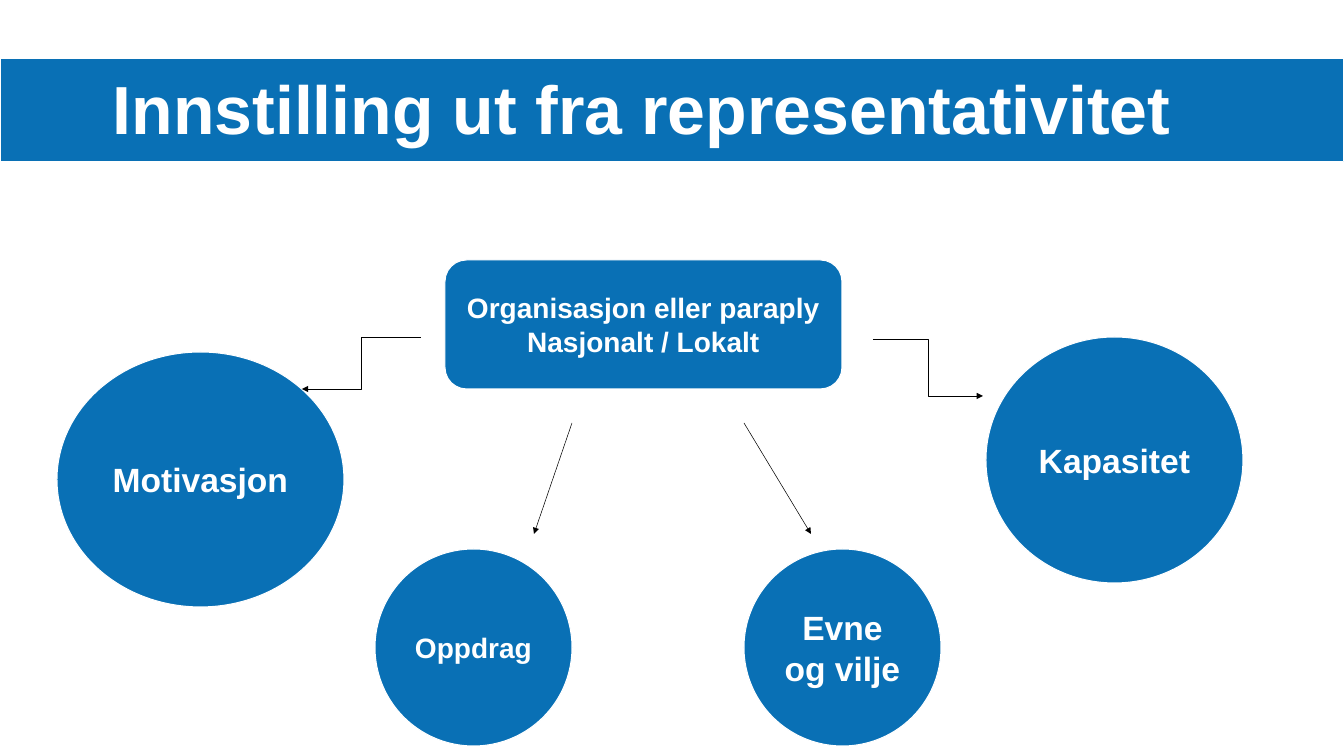
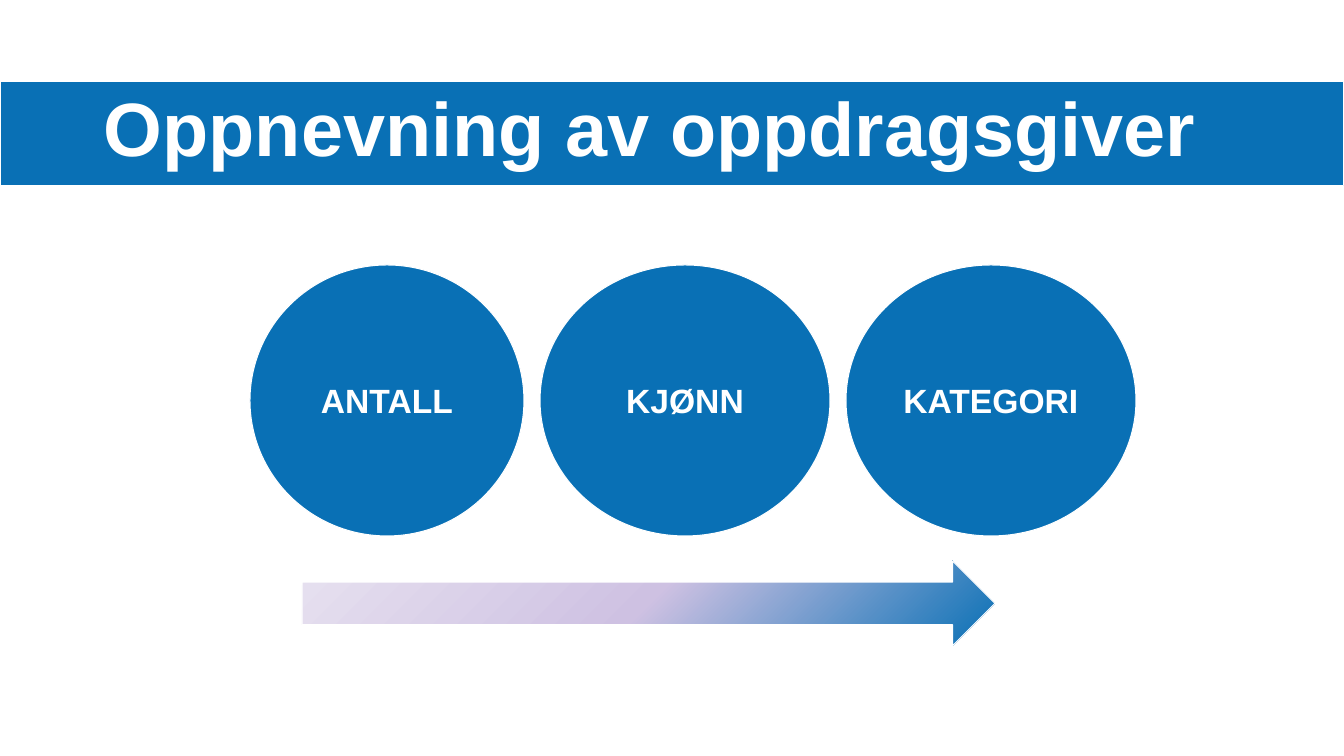
from collections import namedtuple

from pptx import Presentation
from pptx.dml.color import RGBColor
from pptx.enum.shapes import MSO_CONNECTOR, MSO_SHAPE
from pptx.enum.text import MSO_ANCHOR, PP_ALIGN
from pptx.oxml import parse_xml
from pptx.oxml.ns import nsdecls, qn
from pptx.oxml.xmlchemy import OxmlElement
from pptx.util import Emu, Pt

PX = 12095
SLIDE_WIDTH, SLIDE_HEIGHT = 1344, 756
FONT = "Arial"
COLORS = {
    "blue": "0970B5",
    "white": "FFFFFF",
    "black": "000000",
    "lilac": "CEC1E2",
    "pale": "E7E1F0",
}

Box = namedtuple("Box", "left top width height")


def px(value):
    return Emu(value * PX)


def color(name):
    return RGBColor.from_string(COLORS[name])


def inside(outer, left, top, width, height):
    """Turn a place relative to the outer box into a place on the slide."""
    return Box(outer.left + left, outer.top + top, width, height)


def write_text(text_frame, text, size, align):
    text_frame.word_wrap = True
    text_frame.text = text
    for paragraph in text_frame.paragraphs:
        paragraph.alignment = align
        for run in paragraph.runs:
            run.font.name = FONT
            run.font.size = Pt(size)
            run.font.bold = True
            run.font.color.rgb = color("white")


def add_blue_shape(slide, kind, box, text="", size=32):
    shape = slide.shapes.add_shape(kind, *map(px, box))
    shape.shadow.inherit = False
    shape.fill.solid()
    shape.fill.fore_color.rgb = color("blue")
    shape.line.color.rgb = color("white")
    shape.line.width = Pt(1)
    if text:
        shape.text_frame.vertical_anchor = MSO_ANCHOR.MIDDLE
        write_text(shape.text_frame, text, size, PP_ALIGN.CENTER)
    return shape


def add_arrow(slide, kind, area, begin, end):
    points = [px(value) for x, y in (begin, end)
              for value in (area.left + x, area.top + y)]
    connector = slide.shapes.add_connector(kind, *points)
    connector.line.color.rgb = color("black")
    connector.line.width = Pt(0.5)
    tail = OxmlElement("a:tailEnd")
    tail.set("type", "triangle")
    connector.line._get_or_add_ln().append(tail)
    connector._element.spPr.append(OxmlElement("a:effectLst"))


def add_title_band(slide, band, text, size, indent):
    add_blue_shape(slide, MSO_SHAPE.RECTANGLE, band)
    title_box = inside(band, indent, -58, 1146, 149)
    text_frame = slide.shapes.add_textbox(*map(px, title_box)).text_frame
    text_frame.margin_left = text_frame.margin_right = 0
    text_frame.margin_top = text_frame.margin_bottom = 0
    text_frame.vertical_anchor = MSO_ANCHOR.BOTTOM
    write_text(text_frame, text, size, PP_ALIGN.LEFT)
    text_frame.paragraphs[0].line_spacing = 0.9


def add_organisation_diagram(slide, area):
    nodes = [
        (MSO_SHAPE.OVAL, (0, 92, 287, 255), "Motivasjon", 32),
        (MSO_SHAPE.ROUNDED_RECTANGLE, (388, 0, 397, 129),
         "Organisasjon eller paraply\nNasjonalt / Lokalt", 26.7),
        (MSO_SHAPE.OVAL, (318, 289, 197, 197), "Oppdrag", 26.7),
        (MSO_SHAPE.OVAL, (687, 289, 197, 197), "Evne og vilje", 32),
        (MSO_SHAPE.OVAL, (929, 77, 257, 246), "Kapasitet", 32),
    ]
    for kind, place, text, size in nodes:
        add_blue_shape(slide, kind, inside(area, *place), text, size)

    arrows = [
        (MSO_CONNECTOR.ELBOW, (816, 79), (926, 136)),
        (MSO_CONNECTOR.ELBOW, (364, 77), (245, 129)),
        (MSO_CONNECTOR.STRAIGHT, (515, 163), (477, 274)),
        (MSO_CONNECTOR.STRAIGHT, (687, 163), (754, 274)),
    ]
    for kind, begin, end in arrows:
        add_arrow(slide, kind, area, begin, end)


def fill_radial(shape, stops):
    """Fill with a gradient that spreads from the bottom right corner."""
    stop_xml = "".join(
        f'<a:gs pos="{percent * 1000}"><a:srgbClr val="{COLORS[name]}"/></a:gs>'
        for percent, name in stops)
    gradient = parse_xml(
        f'<a:gradFill {nsdecls("a")} rotWithShape="1"><a:gsLst>{stop_xml}</a:gsLst>'
        '<a:path path="circle"><a:fillToRect l="100000" t="100000"/></a:path>'
        '</a:gradFill>')
    properties = shape._element.spPr
    properties.replace(properties.find(qn("a:solidFill")), gradient)


def add_criteria_row(slide, area):
    gap = 16
    left = 0
    for text, width in (("ANTALL", 274), ("KJØNN", 290), ("KATEGORI", 290)):
        add_blue_shape(slide, MSO_SHAPE.OVAL,
                       inside(area, left, 0, width, 271), text)
        left += width + gap
    arrow = add_blue_shape(slide, MSO_SHAPE.RIGHT_ARROW,
                           inside(area, 52, 296, 693, 85))
    fill_radial(arrow, [(0, "blue"), (50, "lilac"), (100, "pale")])


def main():
    presentation = Presentation()
    presentation.slide_width = px(SLIDE_WIDTH)
    presentation.slide_height = px(SLIDE_HEIGHT)
    blank = presentation.slide_layouts[6]

    slide = presentation.slides.add_slide(blank)
    add_title_band(slide, Box(0, 58, SLIDE_WIDTH, 104),
                   "Innstilling ut fra representativitet", 64.8, 113)
    add_organisation_diagram(slide, Box(57, 260, 1186, 486))

    slide = presentation.slides.add_slide(blank)
    add_title_band(slide, Box(0, 82, SLIDE_WIDTH, 104),
                   "Oppnevning av oppdragsgiver", 72, 104)
    add_criteria_row(slide, Box(250, 265, 886, 381))

    presentation.save("out.pptx")


if __name__ == "__main__":
    main()
